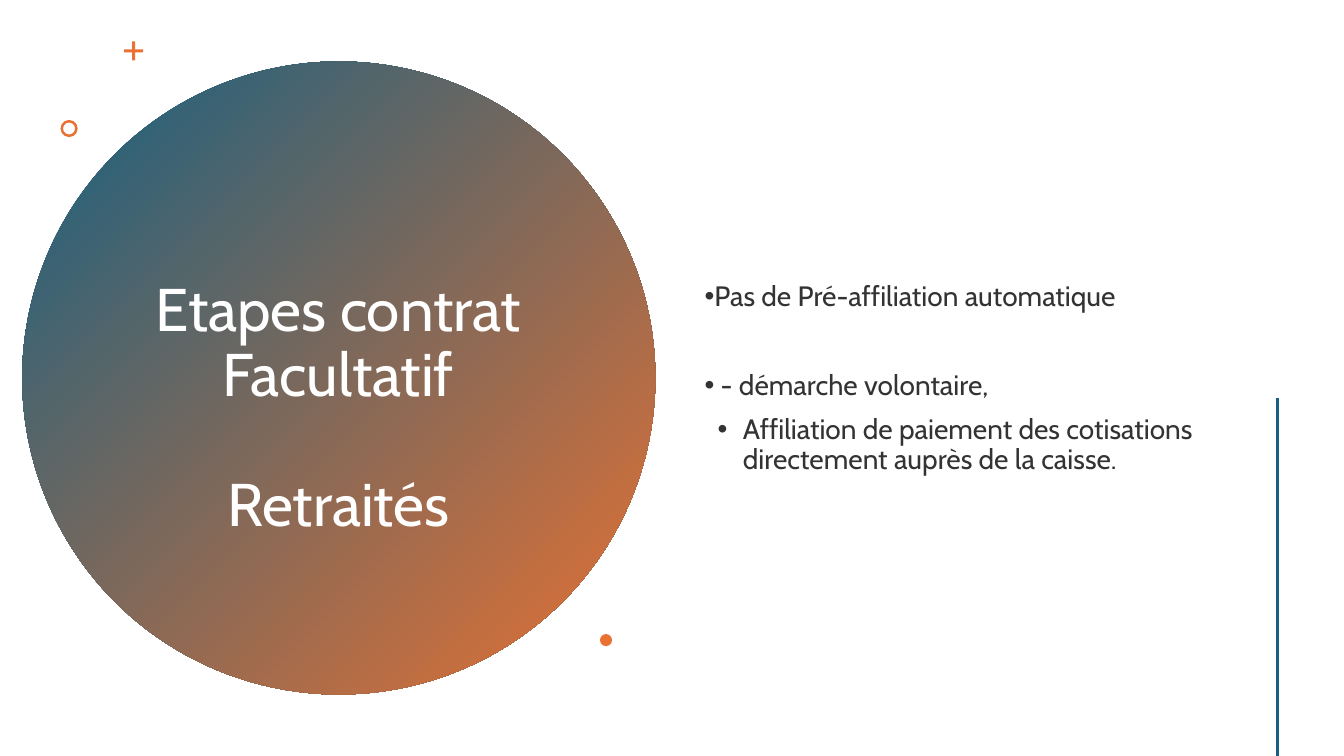
from dataclasses import dataclass

from lxml import etree
from pptx import Presentation
from pptx.dml.color import RGBColor
from pptx.enum.shapes import MSO_CONNECTOR, MSO_SHAPE
from pptx.enum.text import MSO_ANCHOR, PP_ALIGN
from pptx.oxml.ns import qn
from pptx.util import Emu, Inches, Pt

OVAL, CROSS, DONUT = MSO_SHAPE.OVAL, MSO_SHAPE.CROSS, MSO_SHAPE.DONUT
STRAIGHT = MSO_CONNECTOR.STRAIGHT
MIDDLE, CENTER, LEFT = MSO_ANCHOR.MIDDLE, PP_ALIGN.CENTER, PP_ALIGN.LEFT
TITLE_ONLY = 5


@dataclass(frozen=True)
class Theme:
    blue: RGBColor = RGBColor(0x15, 0x60, 0x82)
    orange: RGBColor = RGBColor(0xE9, 0x71, 0x32)
    white: RGBColor = RGBColor(0xFF, 0xFF, 0xFF)
    ink: RGBColor = RGBColor(0x33, 0x33, 0x33)
    font: str = "Cabin"
    title_size: int = 43
    body_size: int = 20
    line_spacing: float = 0.9


@dataclass(frozen=True)
class Box:
    """Left, top, width and height in percent of the slide."""
    x: float
    y: float
    w: float
    h: float


@dataclass(frozen=True)
class Ornament:
    kind: MSO_SHAPE
    box: Box
    adjust: float | None = None


@dataclass(frozen=True)
class Line:
    text: str
    before: float = 0
    margin: float = 0
    bullet: bool = False


THEME = Theme()
CIRCLE = Box(1.65, 8.13, 47.11, 83.73)
TITLE = Box(10.2, 27.33, 29.93, 53.73)
BODY = Box(51.69, 7.6, 39.16, 85.07)
RULE = Box(95.05, 52.67, 0, 47.33)
ORNAMENTS = (
    Ornament(CROSS, Box(9.23, 5.47, 1.43, 2.53), 0.42),
    Ornament(DONUT, Box(4.5, 15.87, 1.28, 2.27), 0.15),
    Ornament(OVAL, Box(44.64, 83.87, 0.9, 1.6)),
)
TITLE_LINES = (Line("Etapes contrat Facultatif"), Line("Retraités", before=46.5))
BODY_LINES = (
    Line("Pas de Pré-affiliation automatique", bullet=True),
    Line(" - démarche volontaire,", before=42, bullet=True),
    Line("Affiliation de paiement des cotisations directement auprès de la caisse.",
         before=10, margin=0.38, bullet=True),
)

prs = Presentation()
prs.slide_width, prs.slide_height = Inches(13.33), Inches(7.5)
s = prs.slides.add_slide(prs.slide_layouts[TITLE_ONLY])


def place(box: Box) -> tuple[Emu, Emu, Emu, Emu]:
    w, h = prs.slide_width / 100, prs.slide_height / 100
    return Emu(int(box.x * w)), Emu(int(box.y * h)), Emu(int(box.w * w)), Emu(int(box.h * h))


def add_ornament(item: Ornament):
    sp = s.shapes.add_shape(item.kind, *place(item.box))
    sp.shadow.inherit = False
    sp.line.fill.background()
    sp.fill.solid()
    sp.fill.fore_color.rgb = THEME.orange
    if item.adjust is not None:
        sp.adjustments[0] = item.adjust
    return sp


def write(tf, lines: tuple[Line, ...], size: int, color: RGBColor, align: PP_ALIGN) -> None:
    tf.word_wrap, tf.vertical_anchor = True, MIDDLE
    for i, line in enumerate(lines):
        p = tf.paragraphs[0] if i == 0 else tf.add_paragraph()
        p.text = line.text
        layout = {"alignment": align, "line_spacing": THEME.line_spacing,
                  "space_before": Pt(line.before)}
        for name, value in layout.items():
            setattr(p, name, value)
        if line.bullet:
            pPr = p._p.get_or_add_pPr()
            pPr.set("marL", str(Inches(line.margin)))
            pPr.set("indent", str(Inches(-0.25)))
            etree.SubElement(pPr, qn("a:buFont")).set("typeface", "Arial")
            etree.SubElement(pPr, qn("a:buChar")).set("char", "•")
        font = p.runs[0].font
        for name, value in {"name": THEME.font, "size": Pt(size)}.items():
            setattr(font, name, value)
        font.color.rgb = color


# Gradient circle, sent behind the title
circle = add_ornament(Ornament(OVAL, CIRCLE))
circle.fill.gradient()
circle.fill.gradient_angle = 315
for stop, color in zip(circle.fill.gradient_stops, (THEME.blue, THEME.orange)):
    stop.color.rgb = color
s.shapes._spTree.insert(2, circle._element)

# Title
title = s.shapes.title
title.left, title.top, title.width, title.height = place(TITLE)
write(title.text_frame, TITLE_LINES, THEME.title_size, THEME.white, CENTER)

# Small ornaments around the circle
for ornament in ORNAMENTS:
    add_ornament(ornament)

# Bullet list
body = s.shapes.add_textbox(*place(BODY))
write(body.text_frame, BODY_LINES, THEME.body_size, THEME.ink, LEFT)

# Vertical rule at the right
x, y, w, h = place(RULE)
rule = s.shapes.add_connector(STRAIGHT, x, y, x + w, y + h)
rule.line.color.rgb, rule.line.width = THEME.blue, Pt(2)
etree.SubElement(rule._element.spPr, qn("a:effectLst"))

prs.save("out.pptx")
